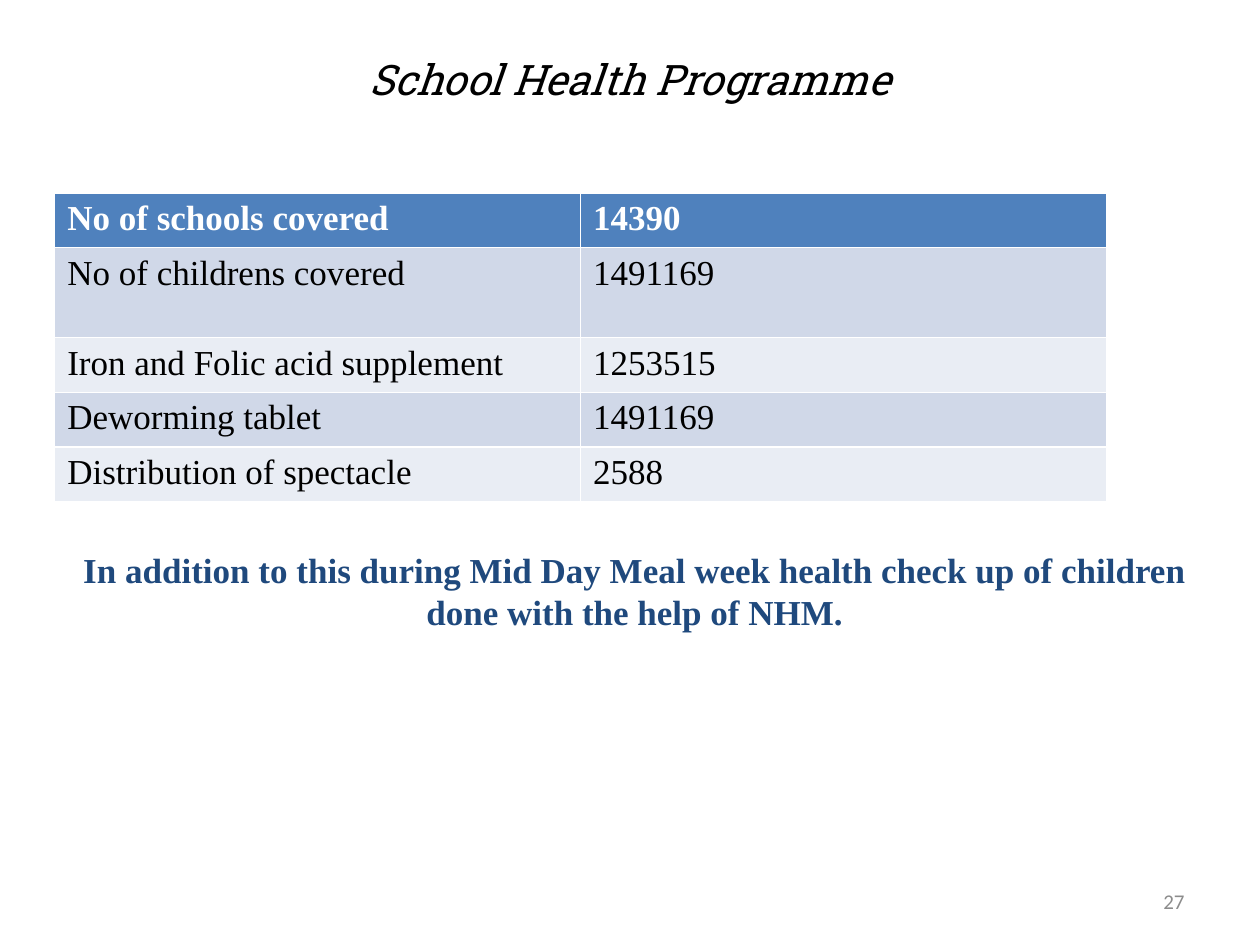
from pptx import Presentation
from pptx.dml.color import RGBColor
from pptx.enum.text import MSO_ANCHOR as Anchor, PP_ALIGN as Align
from pptx.util import Pt

COLORS = {
    "title": "000000",
    "note": "1F497D",
    "number": "8C8C8C",
    "header": "4F81BD",
    "header_text": "FFFFFF",
    "body_text": "000000",
    "band_dark": "D0D8E8",
    "band_light": "E9EDF4",
}
SERIF = "Times New Roman"


def style(paragraph, font_name, size, color, bold=False, italic=False):
    for span in paragraph.runs:
        span.font.name = font_name
        span.font.size = Pt(size)
        span.font.bold = bold
        span.font.italic = italic
        span.font.color.rgb = RGBColor.from_string(COLORS[color])


def add_text(page, text, left, top, width, height, align, *font, **emphasis):
    box = page.shapes.add_textbox(Pt(left), Pt(top), Pt(width), Pt(height))
    frame = box.text_frame
    frame.word_wrap = True
    frame.vertical_anchor = Anchor.MIDDLE
    frame.text = text
    para = frame.paragraphs[0]
    para.alignment = align
    style(para, *font, **emphasis)


deck = Presentation()
deck.slide_width, deck.slide_height = Pt(720), Pt(540)
page = deck.slides.add_slide(deck.slide_layouts[6])

add_text(page, "School Health Programme", 36, 22.5, 648, 45,
         Align.CENTER, "Roboto Slab", 24, "title", italic=True)
add_text(page, "27", 516, 500.5, 168, 28.75,
         Align.RIGHT, "Calibri", 12, "number")

coverage = [
    ("No of schools covered", "14390"),
    ("No of childrens covered", "1491169"),
    ("Iron and Folic acid supplement", "1253515"),
    ("Deworming tablet", "1491169"),
    ("Distribution of spectacle", "2588"),
]
row_heights = [29.25, 51.5, 29.25, 29.25, 29.25]
table = page.shapes.add_table(len(coverage), 2, Pt(31.25), Pt(110.25),
                              Pt(601), Pt(sum(row_heights))).table
for column in table.columns:
    column.width = Pt(300.5)
for index, (entries, height) in enumerate(zip(coverage, row_heights)):
    table.rows[index].height = Pt(height)
    header = index == 0
    fill = "header" if header else "band_dark" if index % 2 else "band_light"
    for cell, text in zip(table.rows[index].cells, entries):
        cell.text = text
        cell.fill.solid()
        cell.fill.fore_color.rgb = RGBColor.from_string(COLORS[fill])
        style(cell.text_frame.paragraphs[0], SERIF, 20,
              "header_text" if header else "body_text", bold=header)

add_text(page, "In addition to this during Mid Day Meal week health check up of "
         "children done with the help of NHM.", 25.5, 298, 674.5, 79.25,
         Align.CENTER, SERIF, 20, "note", bold=True)

deck.save("out.pptx")
